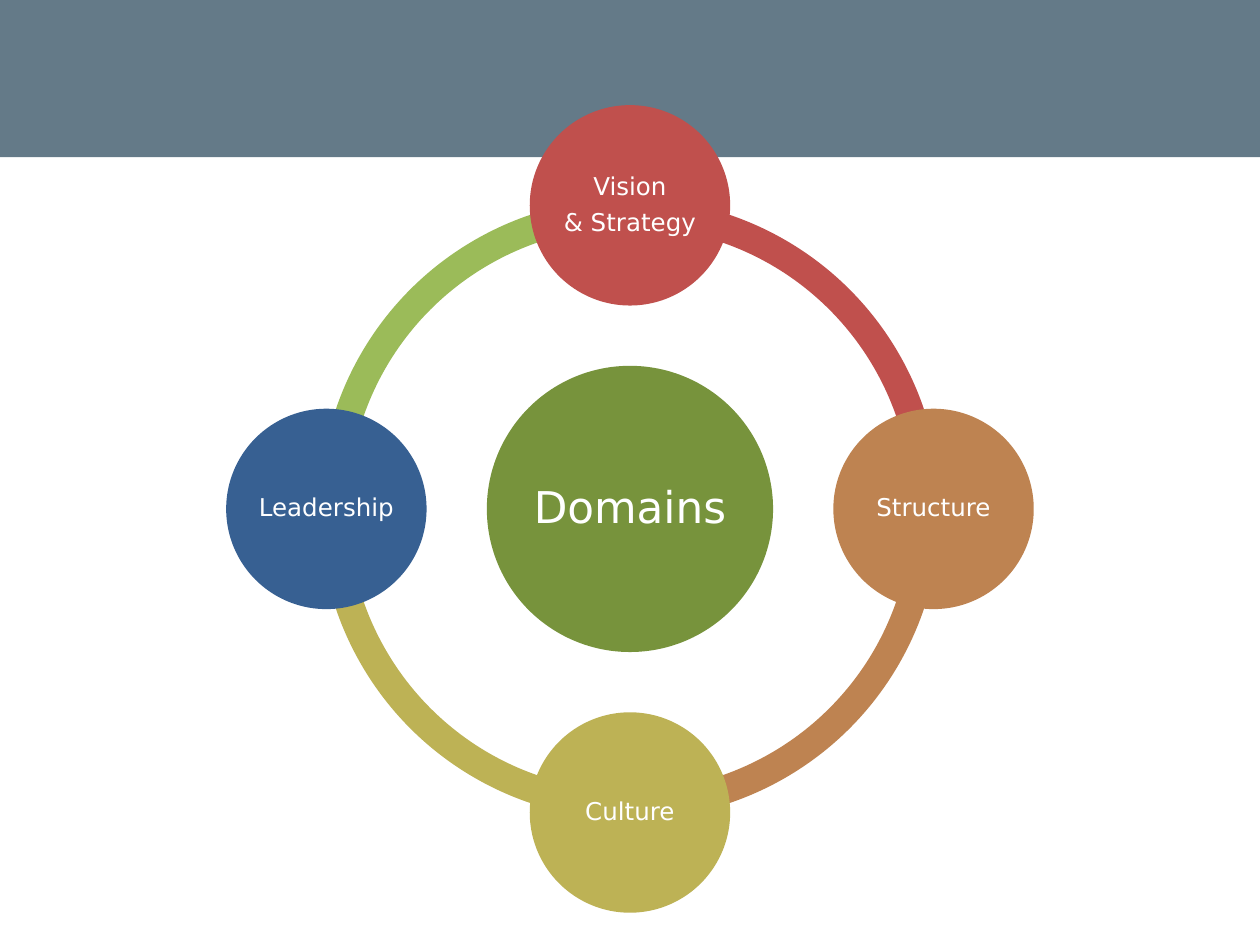
import math

import pptx
import pptx.util
import pptx.dml.color
import pptx.enum.shapes
import pptx.enum.text

Cm = pptx.util.Cm
Pt = pptx.util.Pt
RGBColor = pptx.dml.color.RGBColor
MSO_SHAPE = pptx.enum.shapes.MSO_SHAPE

SLATE = RGBColor(0x64, 0x7A, 0x88)
LIGHT_GREEN = RGBColor(0x9B, 0xBB, 0x59)
GREEN = RGBColor(0x77, 0x93, 0x3C)
RED = RGBColor(0xC0, 0x50, 0x4D)
BROWN = RGBColor(0xBE, 0x83, 0x51)
OLIVE = RGBColor(0xBD, 0xB2, 0x55)
BLUE = RGBColor(0x37, 0x60, 0x92)
WHITE = RGBColor(0xFF, 0xFF, 0xFF)

CENTER_X, CENTER_Y = 12.7, 10.26
RING, HUB, NODE, ORBIT = 12.52, 5.77, 4.04, 6.12

prs = pptx.Presentation()
prs.slide_width = Cm(25.4)
prs.slide_height = Cm(19.05)
s = prs.slides.add_slide(prs.slide_layouts[6])


def add_filled(kind, x, y, w, h, color):
    sp = s.shapes.add_shape(kind, Cm(x), Cm(y), Cm(w), Cm(h))
    sp.shadow.inherit = False
    sp.fill.solid()
    sp.fill.fore_color.rgb = color
    sp.line.fill.background()
    return sp


def add_circle(x, y, size, color, lines, points):
    sp = add_filled(MSO_SHAPE.OVAL, x - size / 2, y - size / 2, size, size, color)
    tf = sp.text_frame
    tf.word_wrap = False
    tf.vertical_anchor = pptx.enum.text.MSO_ANCHOR.MIDDLE
    tf.margin_left = tf.margin_right = tf.margin_top = tf.margin_bottom = Cm(0.05)
    for i, line in enumerate(lines):
        p = tf.add_paragraph() if i else tf.paragraphs[0]
        p.alignment = pptx.enum.text.PP_ALIGN.CENTER
        p.line_spacing = 0.9
        p.space_after = Pt(round(points * 0.41, 1))
        r = p.add_run()
        r.text = line
        r.font.name = "DejaVu Sans"
        r.font.size = Pt(points)
        r.font.color.rgb = WHITE


add_filled(MSO_SHAPE.RECTANGLE, 0, 0, 25.4, 3.17, SLATE)

QUARTER = 54
for start, color in ((2, LIGHT_GREEN), (1, OLIVE), (0, BROWN), (3, RED)):
    sp = add_filled(MSO_SHAPE.BLOCK_ARC, CENTER_X - RING / 2, CENTER_Y - RING / 2,
                    RING, RING, color)
    sp.adjustments[0] = start * QUARTER
    sp.adjustments[1] = (start + 1) % 4 * QUARTER
    sp.adjustments[2] = 0.046

add_circle(CENTER_X, CENTER_Y, HUB, GREEN, ["Domains"], 25)

nodes = [
    (["Vision", "& Strategy"], RED),
    (["Structure"], BROWN),
    (["Culture"], OLIVE),
    (["Leadership"], BLUE),
]
for i, (lines, color) in enumerate(nodes):
    angle = math.radians(90 * i - 90)
    add_circle(CENTER_X + ORBIT * math.cos(angle), CENTER_Y + ORBIT * math.sin(angle),
               NODE, color, lines, 14)

prs.save("out.pptx")
